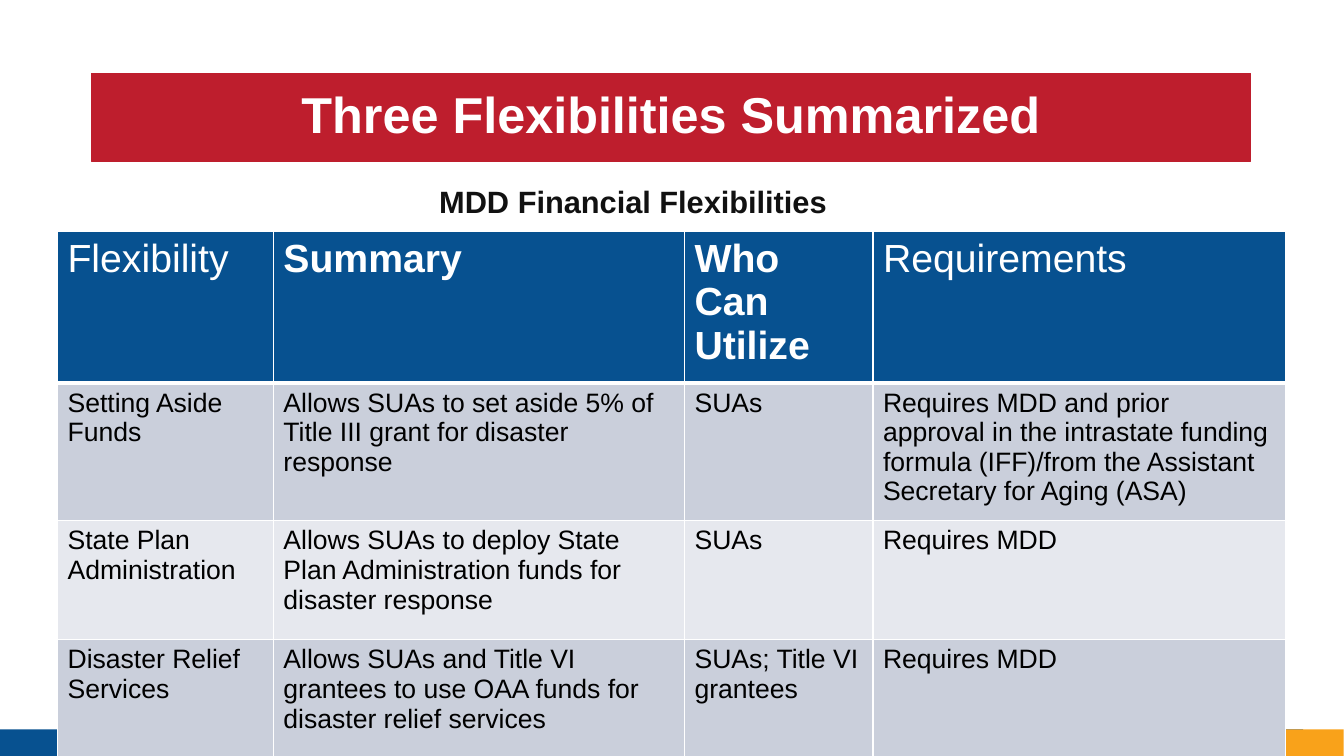
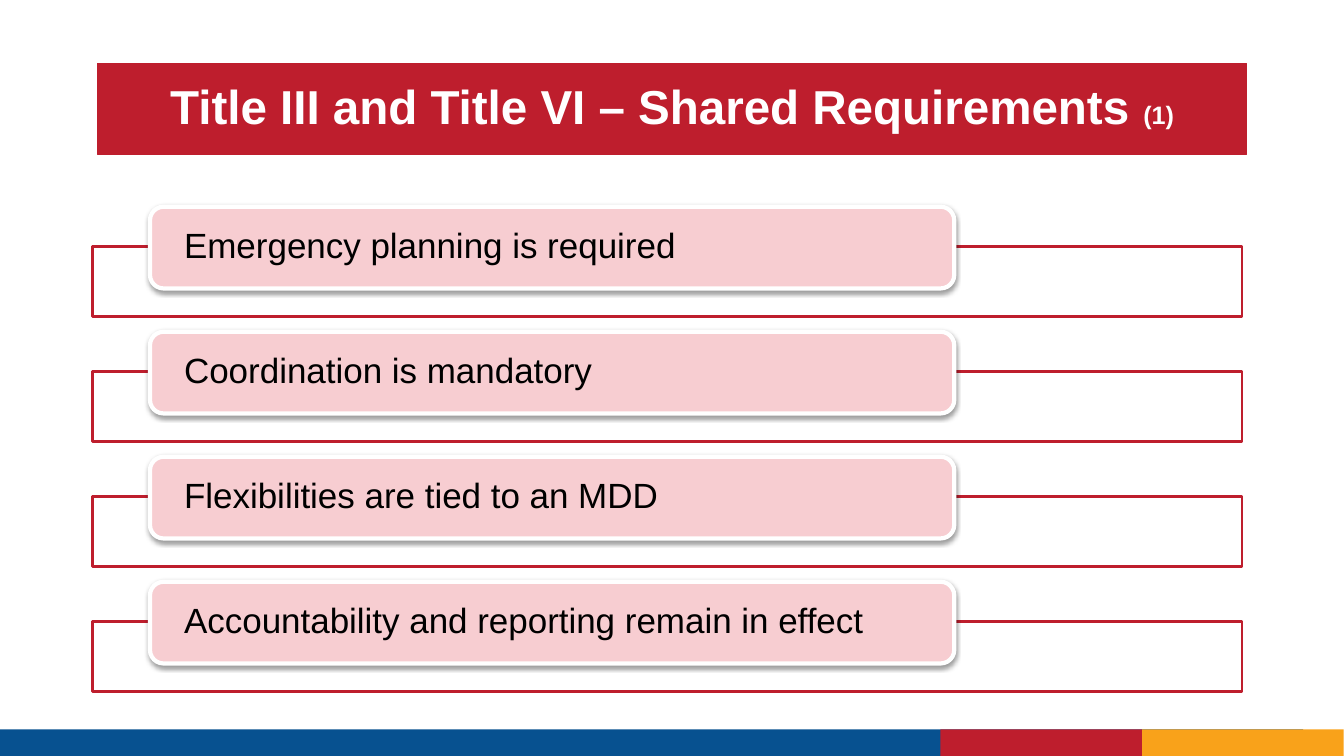
from dataclasses import dataclass
from typing import NamedTuple

from lxml import etree
from pptx import Presentation, util as u
from pptx.dml.color import RGBColor
from pptx.enum import shapes, text
from pptx.oxml import ns


@dataclass(frozen=True)
class Theme:
    font: str = "Arial"
    blue: str = "075190"
    red: str = "BE1E2D"
    gold: str = "F9A21A"
    pink: str = "F7CDD1"
    white: str = "FFFFFF"
    black: str = "000000"
    ink: str = "111111"
    bands: tuple = ("CACFDB", "E6E8EE")
    note: int = 18
    body: int = 19
    label: int = 22
    card: int = 25
    head: int = 28


class Box(NamedTuple):
    """Left, top, width and height in centimetres."""
    left: float
    top: float
    width: float
    height: float

    def cm(self) -> list:
        return [u.Cm(side) for side in self]

    def down(self, gap: float) -> "Box":
        return self._replace(top=self.top + gap)


class Band(NamedTuple):
    box: Box
    fill: str


class Title(NamedTuple):
    box: Box
    words: str
    size: int
    note: str = ""


class Column(NamedTuple):
    head: str
    width: float
    bold: bool


LOOK = Theme()
KIND = shapes.MSO_SHAPE

# Shared footer
FOOT = (
    Band(Box(0, 18.38, 32.84, 0.67), LOOK.blue),
    Band(Box(28.78, 18.38, 5.08, 0.67), LOOK.gold),
    Band(Box(23.7, 18.38, 5.08, 0.67), LOOK.red),
)

# Table content
COLUMNS = (
    Column("Flexibility", 5.44, False),
    Column("Summary", 10.36, True),
    Column("Who Can Utilize", 4.75, True),
    Column("Requirements", 10.39, False),
)
ROWS = (
    ("Setting Aside Funds",
     "Allows SUAs to set aside 5% of Title III grant for disaster response",
     "SUAs",
     "Requires MDD and prior approval in the intrastate funding formula "
     "(IFF)/from the Assistant Secretary for Aging (ASA)"),
    ("State Plan Administration",
     "Allows SUAs to deploy State Plan Administration funds for disaster response",
     "SUAs",
     "Requires MDD"),
    ("Disaster Relief Services",
     "Allows SUAs and Title VI grantees to use OAA funds for disaster relief services",
     "SUAs; Title VI grantees",
     "Requires MDD"),
)
HEIGHTS = (3.56, 3.25, 3, 3)

# Card content
CARDS = (
    "Emergency planning is required",
    "Coordination is mandatory",
    "Flexibilities are tied to an MDD",
    "Accountability and reporting remain in effect",
)
FRAME = Box(2.34, 6.22, 28.96, 1.75)
CARD = Box(3.78, 5.21, 20.27, 2.06)
STEP = 3.15


def paint(run, size: int, color: str, bold: bool = False) -> None:
    run.font.name = LOOK.font
    run.font.size = u.Pt(size)
    run.font.bold = bold
    run.font.color.rgb = RGBColor.from_string(color)


def write(frame, words: str, size: int, color: str, bold: bool = False):
    frame.text = words
    line = frame.paragraphs[0]
    paint(line.runs[0], size, color, bold)
    return line


def block(slide, box: Box, fill: str, edge: str = "", weight: float = 0,
          kind=KIND.RECTANGLE):
    shape = slide.shapes.add_shape(kind, *box.cm())
    shape.shadow.inherit = False
    shape.fill.solid()
    shape.fill.fore_color.rgb = RGBColor.from_string(fill)
    if edge:
        shape.line.color.rgb = RGBColor.from_string(edge)
        shape.line.width = u.Pt(weight)
    else:
        shape.line.fill.background()
    return shape


def shade(shape) -> None:
    """Cast a soft shadow straight down."""
    effects = shape._element.spPr.find(ns.qn("a:effectLst"))
    cast = etree.SubElement(effects, ns.qn("a:outerShdw"), blurRad="40000",
                            dist="20000", dir="5400000", rotWithShape="0")
    color = etree.SubElement(cast, ns.qn("a:srgbClr"), val=LOOK.black)
    etree.SubElement(color, ns.qn("a:alpha"), val="38000")


def border(cell, side: str, weight: float) -> None:
    line = etree.SubElement(cell._tc.get_or_add_tcPr(), ns.qn(f"a:ln{side}"),
                            w=str(u.Pt(weight)))
    fill = etree.SubElement(line, ns.qn("a:solidFill"))
    etree.SubElement(fill, ns.qn("a:srgbClr"), val=LOOK.white)


def start(deck, title: Title):
    """Add a slide with the shared footer and title band."""
    slide = deck.slides.add_slide(deck.slide_layouts[6])
    for band in FOOT:
        block(slide, band.box, band.fill)
    frame = block(slide, title.box, LOOK.red, LOOK.red, 0.75).text_frame
    frame.vertical_anchor = text.MSO_ANCHOR.MIDDLE
    line = write(frame, title.words, title.size, LOOK.white, True)
    line.alignment = text.PP_ALIGN.CENTER
    line.line_spacing = 0.9
    if title.note:
        run = line.add_run()
        run.text = title.note
        paint(run, LOOK.note, LOOK.white, True)
    return slide


def label(slide, box: Box, words: str) -> None:
    frame = slide.shapes.add_textbox(*box.cm()).text_frame
    frame.word_wrap = True
    frame.vertical_anchor = text.MSO_ANCHOR.MIDDLE
    write(frame, words, LOOK.label, LOOK.ink, True)


def grid(slide, left: float, top: float) -> None:
    box = Box(left, top, sum(col.width for col in COLUMNS), sum(HEIGHTS))
    table = slide.shapes.add_table(len(HEIGHTS), len(COLUMNS), *box.cm()).table
    for row, height in zip(table.rows, HEIGHTS):
        row.height = u.Cm(height)
    for x, col in enumerate(COLUMNS):
        table.columns[x].width = u.Cm(col.width)
        for y in range(len(HEIGHTS)):
            cell = table.cell(y, x)
            # A thick rule parts the head from the body
            rules = {"L": 1, "R": 1, "T": 3 if y == 1 else 1,
                     "B": 3 if y == 0 else 1}
            for side, weight in rules.items():
                border(cell, side, weight)
            cell.fill.solid()
            if y == 0:
                fill = LOOK.blue
                write(cell.text_frame, col.head, LOOK.head, LOOK.white, col.bold)
            else:
                fill = LOOK.bands[(y - 1) % 2]
                write(cell.text_frame, ROWS[y - 1][x], LOOK.body, LOOK.black)
            cell.fill.fore_color.rgb = RGBColor.from_string(fill)


def card(slide, words: str, gap: float) -> None:
    block(slide, FRAME.down(gap), LOOK.white, LOOK.red, 2)
    shape = block(slide, CARD.down(gap), LOOK.pink, LOOK.white, 3,
                  KIND.ROUNDED_RECTANGLE)
    shade(shape)
    frame = shape.text_frame
    frame.margin_left = frame.margin_right = u.Cm(0.76)
    frame.margin_top = frame.margin_bottom = 0
    frame.vertical_anchor = text.MSO_ANCHOR.MIDDLE
    line = write(frame, words, LOOK.card, LOOK.black)
    line.alignment = text.PP_ALIGN.LEFT
    line.line_spacing = 0.9


def main() -> None:
    deck = Presentation()
    deck.slide_width = u.Cm(33.87)
    deck.slide_height = u.Cm(19.05)

    # Summary table
    slide = start(deck, Title(Box(2.31, 1.85, 29.21, 2.21),
                              "Three Flexibilities Summarized", 36))
    label(slide, Box(10.82, 4.5, 12.24, 1.14), "MDD Financial Flexibilities")
    grid(slide, 1.45, 5.84)

    # Shared rules
    slide = start(deck, Title(Box(2.46, 1.6, 28.96, 2.29),
                              "Title III and Title VI – Shared Requirements ",
                              34, "(1)"))
    for rank, words in enumerate(CARDS):
        card(slide, words, rank * STEP)

    deck.save("out.pptx")


if __name__ == "__main__":
    main()
